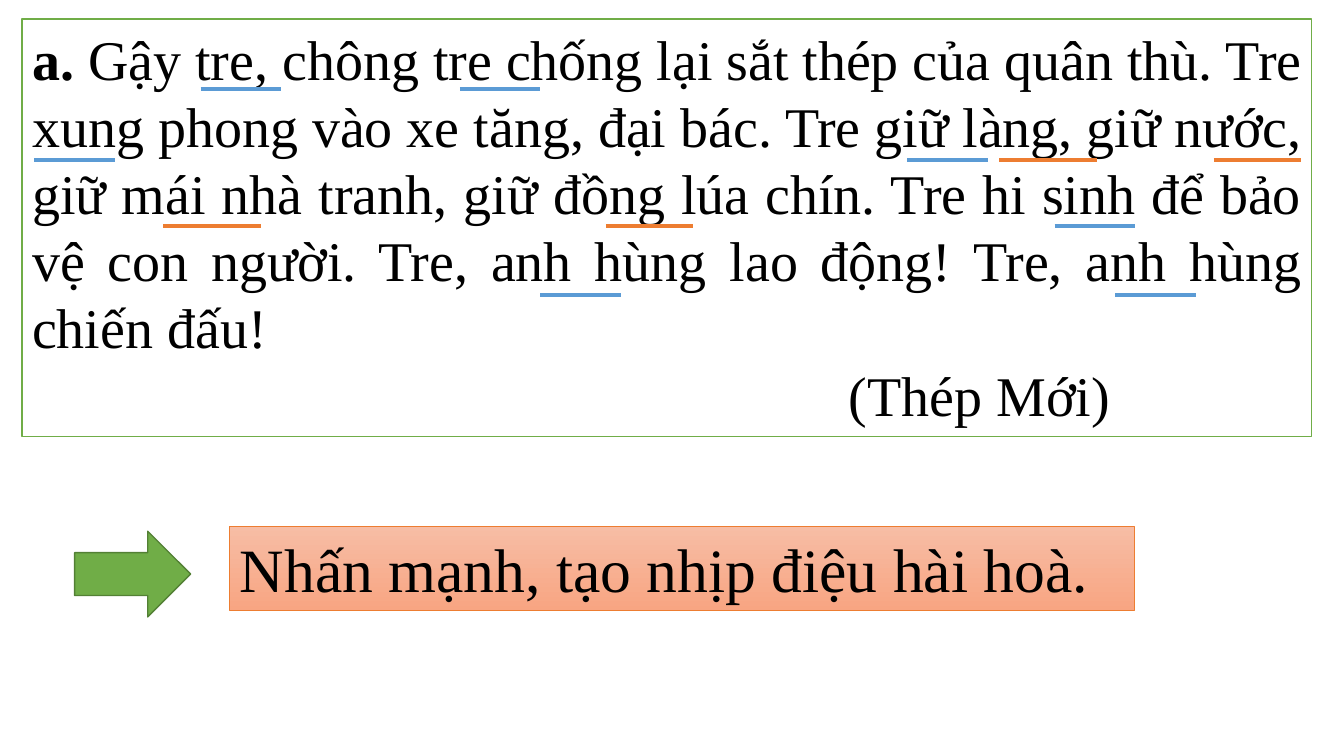
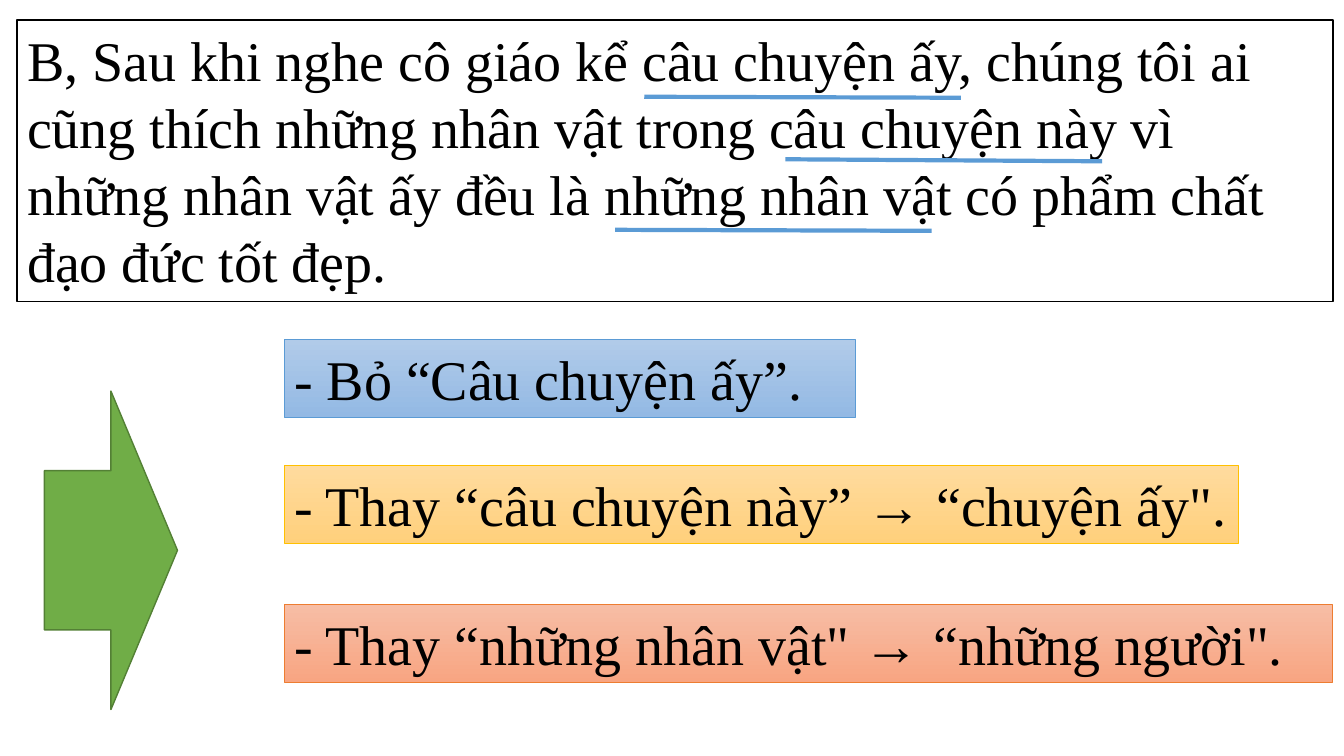
"""Build two Vietnamese lessons on repeated words, each with a passage, underlines and answers."""
from lxml.etree import SubElement
from pptx import Presentation
from pptx.dml.color import RGBColor
from pptx.enum.shapes import MSO_CONNECTOR as Conn, MSO_SHAPE as Shape
from pptx.enum.text import MSO_ANCHOR as Anchor, MSO_AUTO_SIZE as Auto, PP_ALIGN as Align
from pptx.oxml.ns import qn
from pptx.util import Inches, Pt

WIDE, HIGH = 13.33, 7.5
BLUE, ORANGE, GREEN, GOLD = "5B9BD5", "ED7D31", "70AD47", "FFC000"
BLACK, WHITE, MOSS = "000000", "FFFFFF", "538035"
FONT = {"name": "Times New Roman", "bold": False}
FADES = {BLUE: ("B1CBE9", "93B9E4"), GOLD: ("FFDB9E", "FFD07C"), ORANGE: ("F7BDA5", "F8A582")}
SHORT, MID, LONG, SPAN = 0.8, 0.86, 0.97, 3.14

LESSONS = [
    {
        "box": (0.22, 0.19, 12.79, 4.14), "edge": GREEN, "align": Align.JUSTIFY,
        "text": [
            (0, [("a. ", True), (
                "Gậy tre, chông tre chống lại sắt thép của quân thù. Tre xung phong vào xe tăng, "
                "đại bác. Tre giữ làng, giữ nước, giữ mái nhà tranh, giữ đồng lúa chín. Tre hi sinh "
                "để bảo vệ con người. Tre, anh hùng lao động! Tre, anh hùng chiến đấu!", False)]),
            (8.1, [("(Thép Mới)", False)]),
        ],
        "marks": [
            (0.88, 0, [(1.99, SHORT, BLUE), (4.56, SHORT, BLUE)]),
            (1.59, 0, [(0.34, SHORT, BLUE), (9, SHORT, BLUE), (9.91, LONG, ORANGE),
                       (12.04, MID, ORANGE)]),
            (2.24, 0, [(10.46, SHORT, BLUE), (1.62, LONG, ORANGE), (6.01, MID, ORANGE)]),
            (2.93, 0, [(5.36, SHORT, BLUE), (11.06, SHORT, BLUE)]),
        ],
        "arrow": (0.74, 5.27, 1.15, 0.85),
        "size": 44, "left": 2.28, "tall": 0.84,
        "notes": [(5.22, 8.97, ORANGE, "Nhấn mạnh, tạo nhịp điệu hài hoà.")],
    },
    {
        "box": (0.17, 0.2, 13.05, 2.79), "edge": BLACK, "align": Align.LEFT,
        "text": [(0, [(
            "B, Sau khi nghe cô giáo kể câu chuyện ấy, chúng tôi ai cũng thích những nhân vật "
            "trong câu chuyện này vì những nhân vật ấy đều là những nhân vật có phẩm chất "
            "đạo đức tốt đẹp.", False)])],
        "marks": [
            (0.96, 0.01, [(6.39, SPAN, BLUE)]),
            (1.58, 0.02, [(7.79, SPAN, BLUE)]),
            (2.28, 0.01, [(6.1, SPAN, BLUE)]),
        ],
        "arrow": (0.44, 3.88, 1.32, 3.16),
        "size": 40, "left": 2.82, "tall": 0.77,
        "notes": [
            (3.37, 5.66, BLUE, "- Bỏ “Câu chuyện ấy”."),
            (4.62, 9.46, GOLD, "- Thay “câu chuyện này” → “chuyện ấy\"."),
            (6, 10.4, ORANGE, "- Thay “những nhân vật\" → “những người\"."),
        ],
    },
]


def paint(text):
    return RGBColor.from_string(text)


def apply(item, **values):
    for key, value in values.items():
        setattr(item, key, value)


def stroke(line, color, width):
    line.color.rgb = paint(color)
    line.width = Pt(width)


def block(slide, kind, place, fill, edge, width):
    shape = slide.shapes.add_shape(kind, *map(Inches, place))
    shape.shadow.inherit = False
    if fill in FADES:
        shape.fill.gradient()
        shape.fill.gradient_angle = 270
        for stop, color in zip(shape.fill.gradient_stops, FADES[fill]):
            stop.color.rgb = paint(color)
    else:
        shape.fill.solid()
        shape.fill.fore_color.rgb = paint(fill)
    stroke(shape.line, edge, width)
    return shape


def write(shape, lines, size, align):
    frame = shape.text_frame
    apply(frame, word_wrap=True, vertical_anchor=Anchor.TOP, auto_size=Auto.SHAPE_TO_FIT_TEXT)
    for i, (inset, runs) in enumerate(lines):
        para = frame.add_paragraph() if i else frame.paragraphs[0]
        para.alignment = align
        if inset:
            para._p.get_or_add_pPr().set("marL", str(Inches(inset)))
        for text, bold in runs:
            run = para.add_run()
            run.text = text
            apply(run.font, **{**FONT, "size": Pt(size), "bold": bold})
            run.font.color.rgb = paint(BLACK)


def underline(slide, left, top, width, drop, color):
    ends = map(Inches, (left, top, left + width, top + drop))
    line = slide.shapes.add_connector(Conn.STRAIGHT, *ends)
    stroke(line.line, color, 3)
    SubElement(line._element.spPr, qn("a:effectLst"))


def build(slide, plan):
    box = block(slide, Shape.RECTANGLE, plan["box"], WHITE, plan["edge"], 1)
    write(box, plan["text"], 40, plan["align"])
    for top, drop, marks in plan["marks"]:
        for left, width, color in marks:
            underline(slide, left, top, width, drop, color)
    block(slide, Shape.RIGHT_ARROW, plan["arrow"], GREEN, MOSS, 1)
    for top, width, color, text in plan["notes"]:
        place = plan["left"], top, width, plan["tall"]
        note = block(slide, Shape.RECTANGLE, place, color, color, 0.5)
        write(note, [(0, [(text, False)])], plan["size"], Align.LEFT)


deck = Presentation()
apply(deck, slide_width=Inches(WIDE), slide_height=Inches(HIGH))
for plan in LESSONS:
    build(deck.slides.add_slide(deck.slide_layouts[6]), plan)
deck.save("out.pptx")
